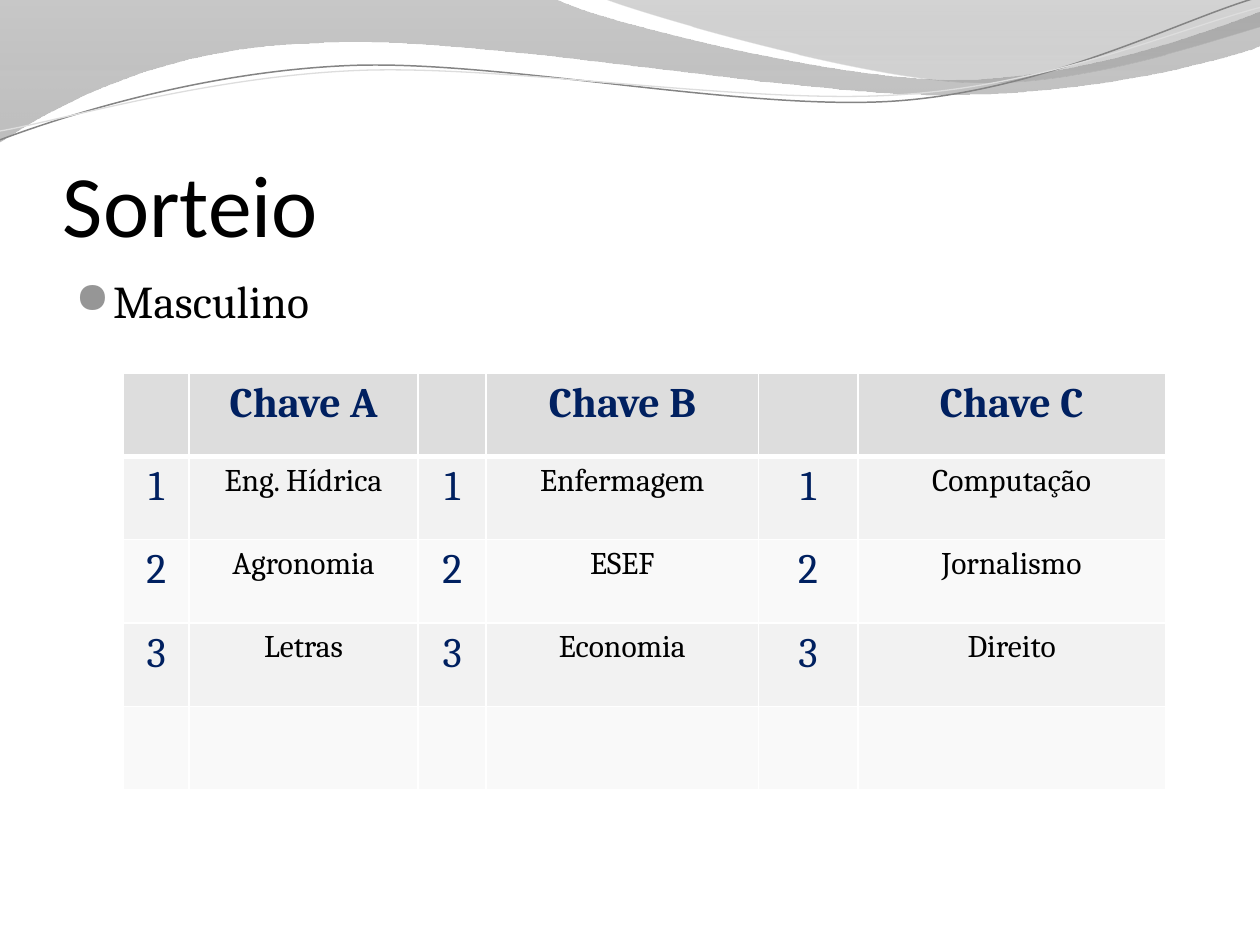
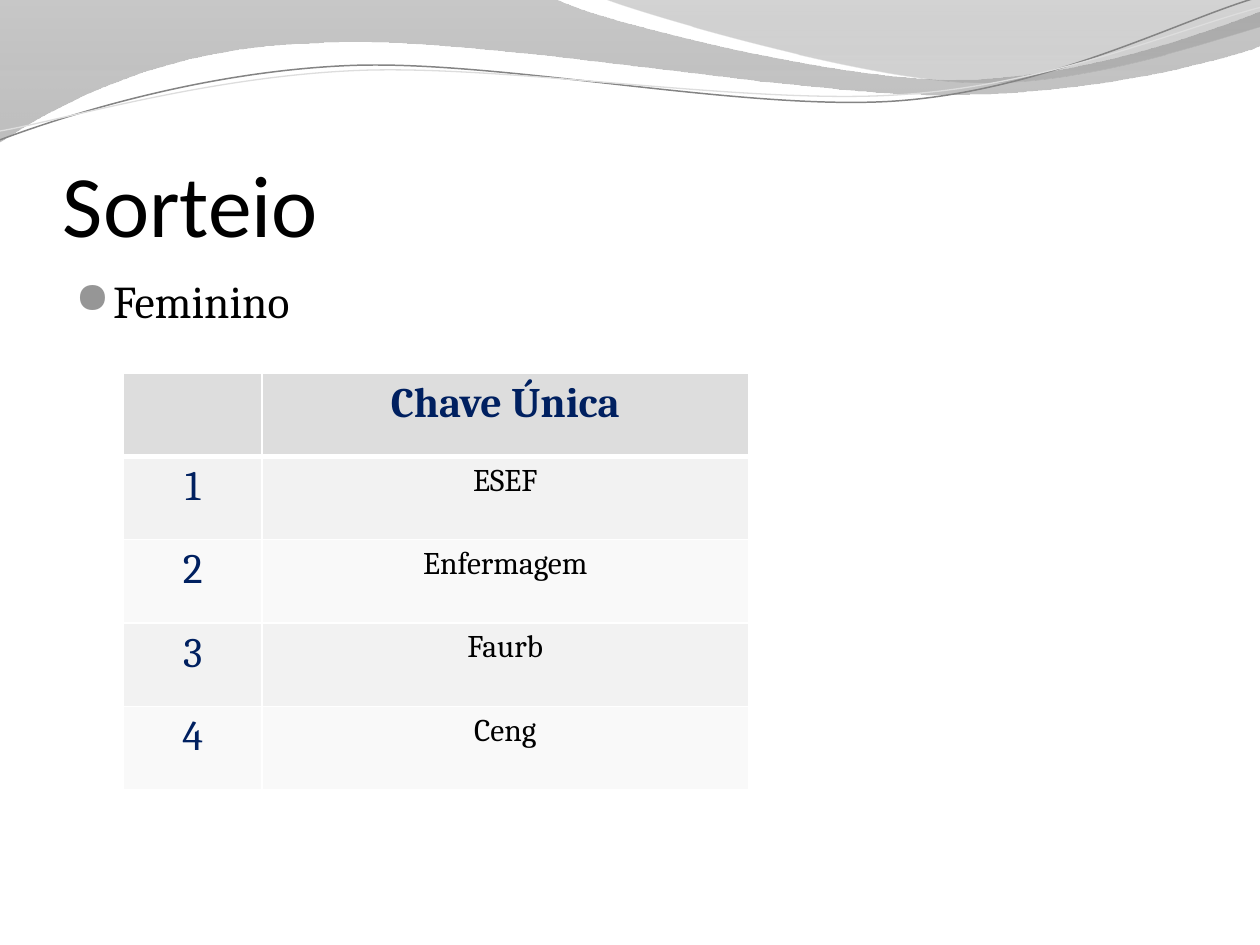
import math
from dataclasses import dataclass
from lxml import etree
from pptx import Presentation, util as u
from pptx.dml.color import RGBColor
from pptx.enum import text
from pptx.oxml.ns import qn


@dataclass
class Theme:
    ink: str = "000000"
    navy: str = "002060"
    white: str = "FFFFFF"
    head: str = "DDDDDD"
    bands: tuple = ("F2F2F2", "F9F9F9")
    dot: str = "969696"
    title_font: str = "Calibri"
    body_font: str = "Cambria"
    dot_font: str = "OpenSymbol"
    title: int = 50
    body: int = 26
    key: int = 24
    name: int = 18


look = Theme()
rgb = RGBColor.from_string

# Waves: start, then segments of 1 point (line) or 3 points (curve)
fills = [
    ((0, 0), [
        [(4.4, -0.01)],
        [(4.76, 0.17), (6.64, 0.63), (7.58, 0.63)],
        [(8.53, 0.63), (9.58, 0.26), (10, 0.09)],
        [(10.01, 0.36)],
        [(9.83, 0.44), (8.7, 0.76), (7.46, 0.75)],
        [(6.22, 0.75), (3.82, 0.28), (2.57, 0.34)],
        [(1.29, 0.36), (0.46, 0.83), (-0.01, 1.13)],
        [(0, 0)],
    ], [(0, "848484", 45), (1, "888888", 55)]),
    ((4.79, -0.01), [
        [(5.09, 0.11), (6.82, 0.62), (7.69, 0.65)],
        [(8.56, 0.69), (9.61, 0.32), (10, 0.21)],
        [(10, 0)],
        [(4.79, -0.01)],
    ], [(0, "6F6F6F", 30), (0.8, "9D9D9D", 45)]),
]
# Lines also have the centre that they are turned about
lines = [
    ((0, 1.11), [
        [(0.48, 0.93), (1.58, 0.57), (2.77, 0.52)],
        [(3.95, 0.47), (5.93, 0.89), (7.13, 0.8)],
        [(8.33, 0.71), (9.38, 0.15), (9.98, -0.02)],
    ], (4.99, 0.58), "848484", 0.85),
    ((0, 1.04), [
        [(0.47, 0.96), (1.64, 0.61), (2.83, 0.56)],
        [(4.03, 0.51), (5.97, 0.84), (7.17, 0.75)],
        [(8.36, 0.67), (9.41, 0.21), (10, 0.06)],
    ], (5, 0.59), "DDDDDD", 0.75),
]
tilt = -2.7

# Each draw: label, column widths, groups of teams
draws = [
    ("Masculino", [0.52, 1.82, 0.54, 2.16, 0.79, 2.44], [
        ("Chave A", ["Eng. Hídrica", "Agronomia", "Letras"]),
        ("Chave B", ["Enfermagem", "ESEF", "Economia"]),
        ("Chave C", ["Computação", "Jornalismo", "Direito"]),
    ]),
    ("Feminino", [1.1, 3.86], [
        ("Chave Única", ["ESEF", "Enfermagem", "Faurb", "Ceng"]),
    ]),
]
rows, tall = 5, 3.31


def trace(slide, start, parts, close, turn=0, mid=(0, 0)):
    """Draw an outline of lines and true curves, turned about mid."""
    cos, sin = math.cos(math.radians(turn)), math.sin(math.radians(turn))
    pts = []
    for x, y in [start] + [pt for part in parts for pt in part]:
        dx, dy = x - mid[0], y - mid[1]
        pts.append((u.Inches(mid[0] + dx * cos + dy * sin),
                    u.Inches(mid[1] - dx * sin + dy * cos)))
    pen = slide.shapes.build_freeform(*pts[0])
    pen.add_line_segments(pts[1:], close)
    shape = pen.convert_to_shape()
    shape.shadow.inherit = False
    shape.rotation = turn
    steps = iter(list(shape._element.iter(qn("a:lnTo"))))
    for part in parts:
        group = [next(steps) for _ in part]
        if len(group) == 3:
            curve = etree.Element(qn("a:cubicBezTo"))
            group[0].addprevious(curve)
            for old in group:
                curve.append(old[0])
                old.getparent().remove(old)
    return shape


def style(par, size, color, font=look.body_font, bold=False):
    """Format every run of a paragraph."""
    for run in par.runs:
        run.font.size = u.Pt(size)
        run.font.name = font
        run.font.bold = bold
        run.font.color.rgb = rgb(color)


deck = Presentation()
deck.slide_width, deck.slide_height = u.Inches(10), u.Inches(7.5)
slides = [deck.slides.add_slide(deck.slide_layouts[6]) for _ in draws]

# Wave band, drawn once and moved to the master
waves = []
for start, parts, stops in fills:
    wave = trace(slides[0], start, parts, True)
    wave.line.fill.background()
    wave.fill.gradient()
    wave.fill.gradient_angle = 270
    for stop, (pos, color, _) in zip(wave.fill.gradient_stops, stops):
        stop.position = pos
        stop.color.rgb = rgb(color)
    tones = wave._element.spPr.iter(qn("a:srgbClr"))
    for tone, (_, _, alpha) in zip(tones, stops):
        etree.SubElement(tone, qn("a:alpha"), val=str(alpha * 1000))
    waves.append(wave)
for start, parts, mid, color, width in lines:
    wave = trace(slides[0], start, parts, False, tilt, mid)
    wave.fill.background()
    wave.line.color.rgb = rgb(color)
    wave.line.width = u.Pt(width)
    waves.append(wave)
tree = deck.slide_master.shapes._spTree
for i, wave in enumerate(waves):
    wave._element.nvSpPr.cNvPr.set("id", str(20 + i))
    tree.insert(2 + i, wave._element)

for slide, (label, widths, groups) in zip(slides, draws):
    # Title
    box = slide.shapes.add_textbox(
        u.Inches(0.5), u.Inches(0.77), u.Inches(9), u.Inches(1.25))
    frame = box.text_frame
    frame.word_wrap = True
    frame.vertical_anchor = text.MSO_ANCHOR.BOTTOM
    frame.margin_left = frame.margin_right = frame.margin_bottom = 0
    frame.text = "Sorteio"
    style(frame.paragraphs[0], look.title, look.ink, look.title_font)

    # Bullet
    box = slide.shapes.add_textbox(
        u.Inches(0.5), u.Inches(2.12), u.Inches(9), u.Inches(4.8))
    box.text_frame.word_wrap = True
    box.text_frame.text = label
    par = box.text_frame.paragraphs[0]
    par.space_before = u.Pt(look.body * 0.2)
    style(par, look.body, look.ink)
    props = par._p.get_or_add_pPr()
    props.set("marL", str(u.Inches(0.3)))
    props.set("indent", str(-u.Inches(0.3)))
    tone = etree.SubElement(props, qn("a:buClr"))
    etree.SubElement(tone, qn("a:srgbClr"), val=look.dot)
    etree.SubElement(props, qn("a:buSzPct"), val="95000")
    etree.SubElement(props, qn("a:buFont"), typeface=look.dot_font)
    etree.SubElement(props, qn("a:buChar"), char="●")

    # Table
    table = slide.shapes.add_table(
        rows, len(widths), u.Inches(0.98), u.Inches(2.96),
        u.Inches(sum(widths)), u.Inches(tall)).table
    for col, width in zip(table.columns, widths):
        col.width = u.Inches(width)
    for r, row in enumerate(table.rows):
        row.height = u.Inches(tall / rows)
        for c, cell in enumerate(row.cells):
            # White borders, thick under the header
            for side in "LRTB":
                thick = (r, side) in ((0, "B"), (1, "T"))
                edge = etree.SubElement(
                    cell._tc.get_or_add_tcPr(), qn("a:ln" + side),
                    w=str(u.Pt(3 if thick else 1)))
                fill = etree.SubElement(edge, qn("a:solidFill"))
                etree.SubElement(fill, qn("a:srgbClr"), val=look.white)
            cell.fill.solid()
            cell.fill.fore_color.rgb = rgb(
                look.bands[(r - 1) % 2] if r else look.head)

            # Number column, then team column, for each group
            head, teams = groups[c // 2]
            is_key = c % 2 == 0
            if r > len(teams) or (r == 0 and is_key):
                continue
            cell.text_frame.text = (
                str(r) if is_key else teams[r - 1] if r else head)
            par = cell.text_frame.paragraphs[0]
            par.alignment = text.PP_ALIGN.CENTER
            if is_key or r == 0:
                style(par, look.key, look.navy, bold=r == 0)
            else:
                style(par, look.name, look.ink)

deck.save("out.pptx")
